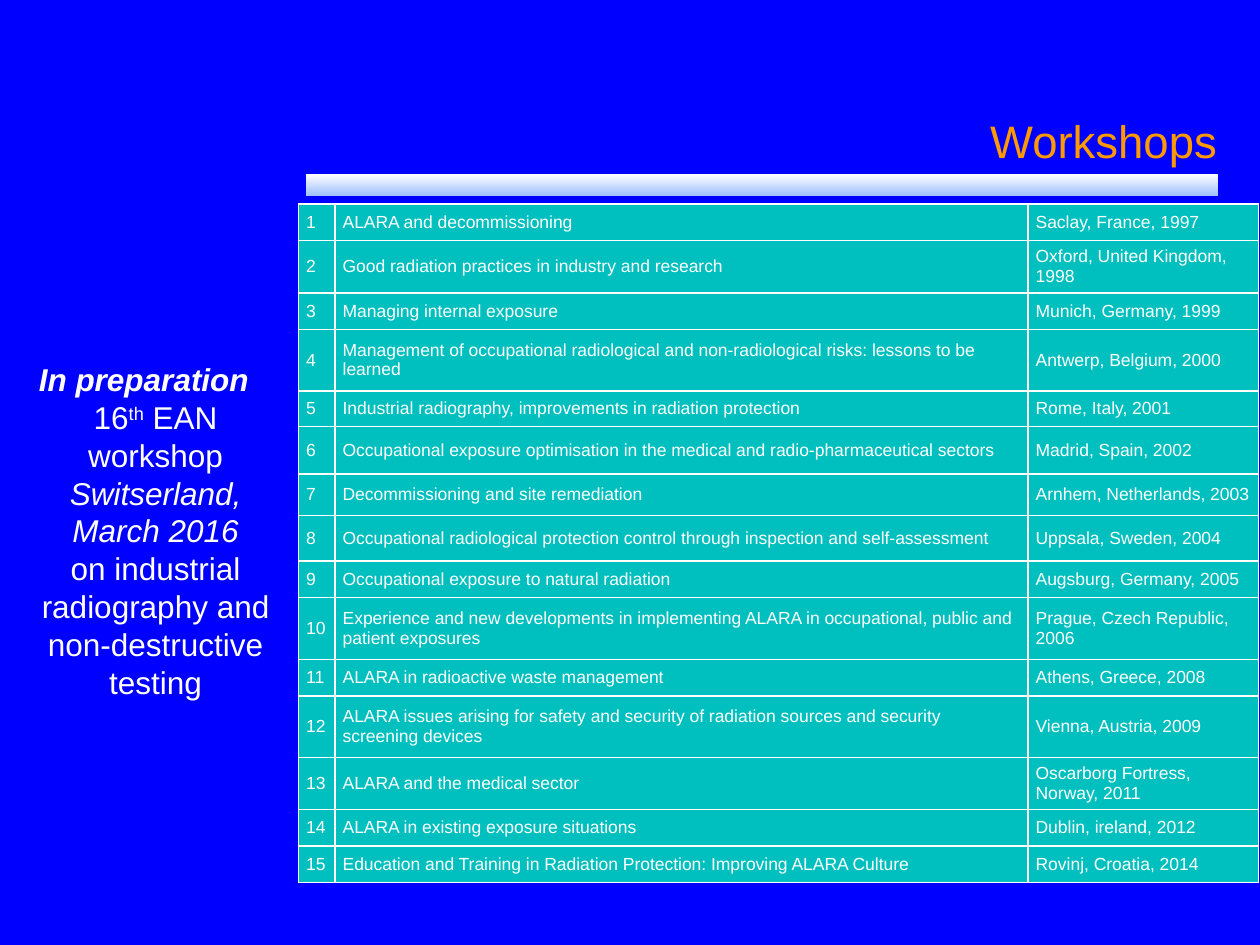
"""Build the slide that lists past workshops and the one in preparation."""
from pptx import Presentation
from pptx import util as u
from pptx.dml.color import RGBColor
from pptx.enum import shapes, text

THEME = {
    "font": "Arial",
    "background": RGBColor(0x00, 0x00, 0xFF),
    "accent": RGBColor(0xFF, 0x99, 0x00),
    "body": RGBColor(0xFF, 0xFF, 0xFF),
    "table": RGBColor(0x00, 0xBF, 0xBF),
    "bar": (RGBColor(0xFF, 0xFF, 0xFF), RGBColor(0xA2, 0xC1, 0xFE)),
    "title_size": u.Pt(26),
    "note_size": u.Pt(18),
    "cell_size": u.Pt(10),
}
WORKSHOPS = [
    (0.29, "ALARA and decommissioning", "Saclay, France, 1997"),
    (0.39, "Good radiation practices in industry and research", "Oxford, United Kingdom, 1998"),
    (0.29, "Managing internal exposure", "Munich, Germany, 1999"),
    (0.49, "Management of occupational radiological and non-radiological risks: lessons to be learned",
     "Antwerp, Belgium, 2000"),
    (0.28, "Industrial radiography, improvements in radiation protection", "Rome, Italy, 2001"),
    (0.38, "Occupational exposure optimisation in the medical and radio-pharmaceutical sectors",
     "Madrid, Spain, 2002"),
    (0.33, "Decommissioning and site remediation", "Arnhem, Netherlands, 2003"),
    (0.36, "Occupational radiological protection control through inspection and self-assessment",
     "Uppsala, Sweden, 2004"),
    (0.29, "Occupational exposure to natural radiation", "Augsburg, Germany, 2005"),
    (0.49, "Experience and new developments in implementing ALARA in occupational, public and patient exposures",
     "Prague, Czech Republic, 2006"),
    (0.29, "ALARA in radioactive waste management", "Athens, Greece, 2008"),
    (0.49, "ALARA issues arising for safety and security of radiation sources and security screening devices",
     "Vienna, Austria, 2009"),
    (0.24, "ALARA and the medical sector", "Oscarborg Fortress, Norway, 2011"),
    (0.29, "ALARA in existing exposure situations", "Dublin, ireland, 2012"),
    (0.29, "Education and Training in Radiation Protection: Improving ALARA Culture", "Rovinj, Croatia, 2014"),
]
UPCOMING = [
    (text.PP_ALIGN.LEFT, [("In preparation", {"bold": True, "italic": True})]),
    (text.PP_ALIGN.CENTER, [("16", {}), ("th", {"baseline": "30000"}), (" EAN workshop", {}),
                            (" Switserland, March 2016", {"italic": True})]),
    (text.PP_ALIGN.CENTER, [("on industrial radiography and non-destructive testing", {})]),
]


def apply(target, values):
    for key, value in values.items():
        setattr(target, key, value)


def add_words(paragraph, words, size, color, baseline=None, **style):
    run = paragraph.add_run()
    run.text = words
    apply(run.font, {"name": THEME["font"], "size": size, **style})
    run.font.color.rgb = color
    if baseline:
        run._r.get_or_add_rPr().set("baseline", baseline)


deck = Presentation()
apply(deck, {"slide_width": u.Inches(10), "slide_height": u.Inches(7.5)})
slide = deck.slides.add_slide(deck.slide_layouts[6])
slide.background.fill.solid()
slide.background.fill.fore_color.rgb = THEME["background"]

bar = slide.shapes.add_shape(shapes.MSO_SHAPE.RECTANGLE, u.Inches(2.43), u.Inches(1.38),
                             u.Inches(7.24), u.Inches(0.17))
bar.shadow.inherit = False
bar.line.fill.background()
bar.fill.gradient()
bar.fill.gradient_angle = 270
for stop, position, color in zip(bar.fill.gradient_stops, (0, 1), THEME["bar"]):
    stop.position = position
    stop.color.rgb = color

heading = slide.shapes.add_textbox(u.Inches(2.48), u.Inches(0.59), u.Inches(7.22), u.Inches(0.78)).text_frame
inset = u.Inches(0.04)
apply(heading, {"word_wrap": True, "vertical_anchor": text.MSO_ANCHOR.BOTTOM, "margin_left": inset,
                "margin_right": inset, "margin_top": inset, "margin_bottom": inset})
apply(heading.paragraphs[0], {"alignment": text.PP_ALIGN.RIGHT, "line_spacing": 0.8})
add_words(heading.paragraphs[0], "Workshops", THEME["title_size"], THEME["accent"])

history = slide.shapes.add_table(len(WORKSHOPS), 3, u.Inches(2.37), u.Inches(1.62),
                                 u.Inches(7.63), u.Inches(5.32)).table
apply(history, {"first_row": False, "horz_banding": False})
for column, width in zip(history.columns, (0.29, 5.5, 1.83)):
    column.width = u.Inches(width)
cell_format = {"vertical_anchor": text.MSO_ANCHOR.MIDDLE, "margin_left": u.Inches(0.06),
               "margin_right": u.Inches(0.06), "margin_top": inset, "margin_bottom": inset}
for number, (row, (height, topic, venue)) in enumerate(zip(history.rows, WORKSHOPS), start=1):
    row.height = u.Inches(height)
    for cell, words in zip(row.cells, (str(number), topic, venue)):
        apply(cell, cell_format)
        cell.fill.solid()
        cell.fill.fore_color.rgb = THEME["table"]
        add_words(cell.text_frame.paragraphs[0], words, THEME["cell_size"], THEME["body"])

upcoming = slide.shapes.add_textbox(u.Inches(0.21), u.Inches(2.81), u.Inches(2.05), u.Inches(2.83)).text_frame
apply(upcoming, {"word_wrap": True, "auto_size": text.MSO_AUTO_SIZE.SHAPE_TO_FIT_TEXT})
for index, (alignment, pieces) in enumerate(UPCOMING):
    paragraph = upcoming.add_paragraph() if index else upcoming.paragraphs[0]
    paragraph.alignment = alignment
    for words, style in pieces:
        add_words(paragraph, words, THEME["note_size"], THEME["body"], **style)

deck.save("out.pptx")
